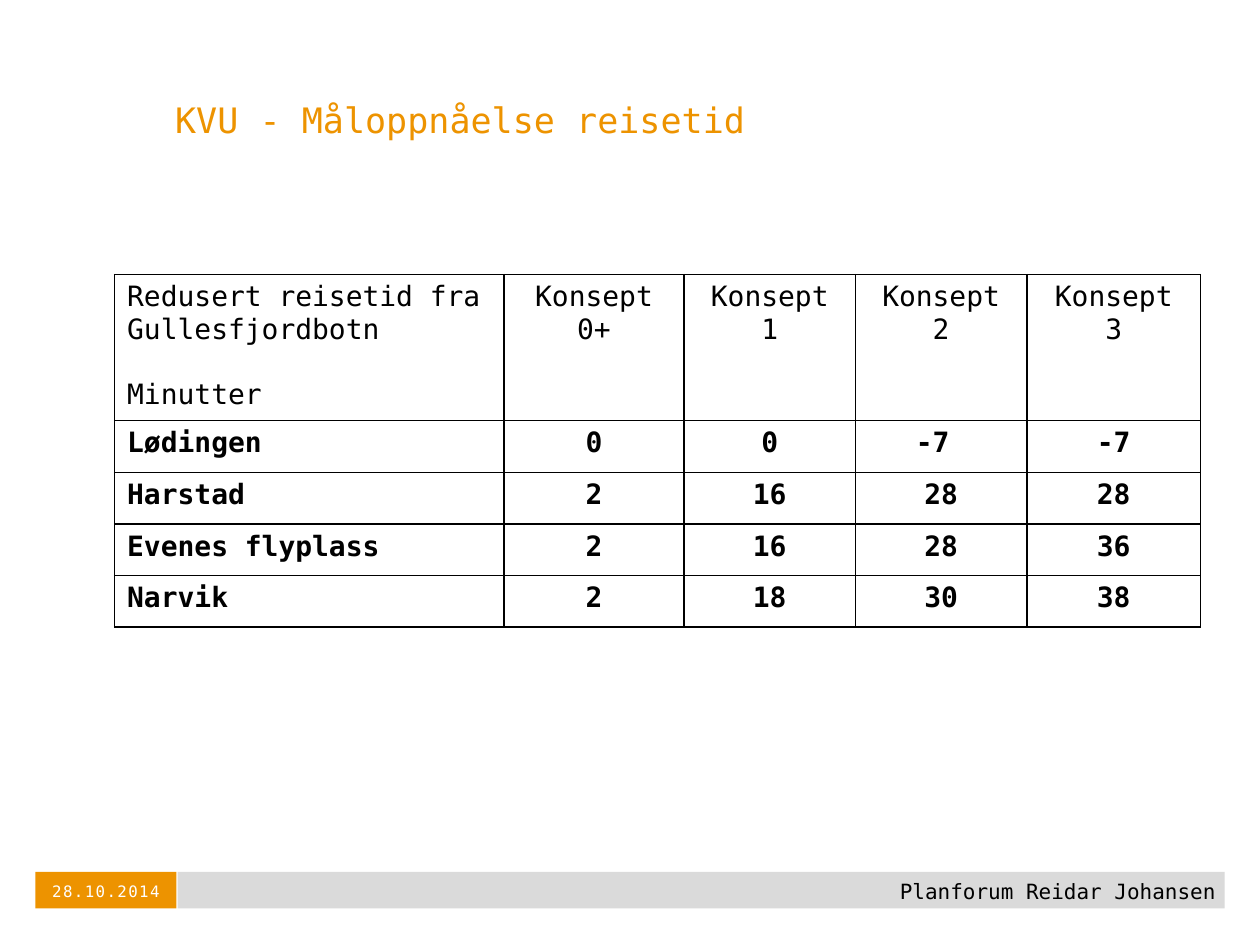
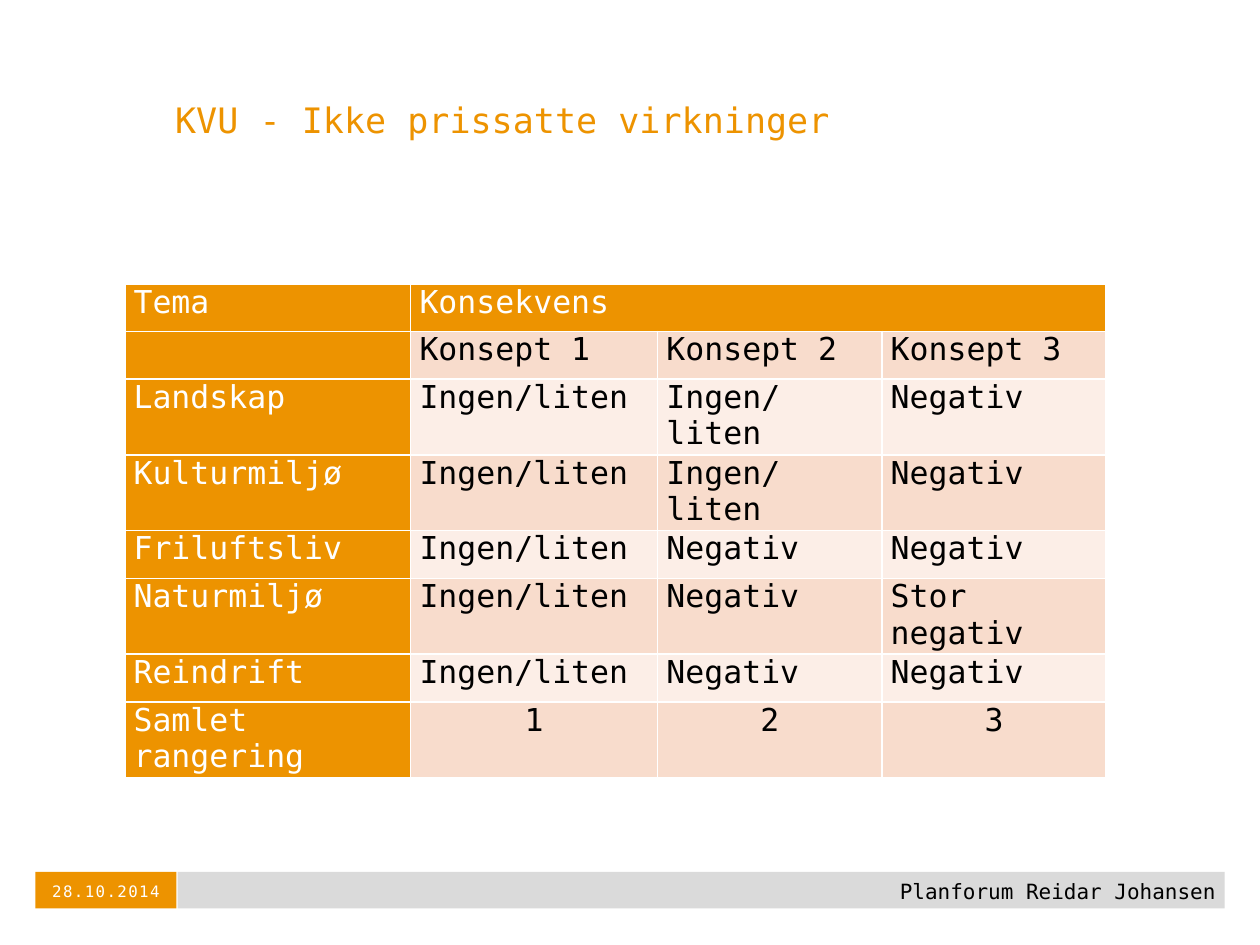
"""Build two slides with concept comparison tables for a road study."""
from lxml import etree
from pptx import Presentation
from pptx import util as u
from pptx.dml.color import RGBColor
from pptx.enum import shapes, text
from pptx.oxml.ns import qn

THEME = dict(
    font="DejaVu Sans Mono", orange="ED9300", grey="DADADA", black="000000", white="FFFFFF",
    peach="F8DCCC", pale="FCEEE7", title=20, goals=16, effects=18, footer=12, date=9)
LEFT, CENTER, RIGHT = text.PP_ALIGN.LEFT, text.PP_ALIGN.CENTER, text.PP_ALIGN.RIGHT
TOP, MIDDLE = text.MSO_ANCHOR.TOP, text.MSO_ANCHOR.MIDDLE


def write(tf, content, size, color="black", align=LEFT, bold=False, gap=0, spacing=0,
          inset=(0, 0), anchor=TOP):
    """Fill a text frame, one paragraph per line, with gap points between them."""
    tf.word_wrap = True
    tf.vertical_anchor = anchor
    tf.margin_left = tf.margin_right = u.Inches(inset[0])
    tf.margin_top = tf.margin_bottom = u.Inches(inset[1])
    for i, line in enumerate(content.split("\n")):
        p = tf.add_paragraph() if i else tf.paragraphs[0]
        p.alignment = align
        p.space_before = u.Pt(gap if i else 0)
        p.font.size = u.Pt(THEME[size])
        if not line:
            continue
        r = p.add_run()
        r.text = line
        r.font.name = THEME["font"]
        r.font.size = u.Pt(THEME[size])
        r.font.bold = bold
        r.font.color.rgb = RGBColor.from_string(THEME[color])
        if spacing:
            r._r.get_or_add_rPr().set("spc", str(spacing))


def add_grid(s, left, top, widths, heights, border):
    """Add a plain table with one border colour and return it."""
    frame = s.shapes.add_table(len(heights), len(widths), u.Inches(left), u.Inches(top),
                               u.Inches(sum(widths)), u.Inches(sum(heights)))
    table = frame.table
    table.first_row = table.horz_banding = False
    for col, width in zip(table.columns, widths):
        col.width = u.Inches(width)
    for row, height in zip(table.rows, heights):
        row.height = u.Inches(height)
    for cell in table.iter_cells():
        tcPr = cell._tc.get_or_add_tcPr()
        for side in ("a:lnL", "a:lnR", "a:lnT", "a:lnB"):
            ln = etree.SubElement(tcPr, qn(side), w=str(u.Pt(1)))
            fill = etree.SubElement(ln, qn("a:solidFill"))
            etree.SubElement(fill, qn("a:srgbClr"), val=THEME[border])
    return table


prs = Presentation()
prs.slide_width, prs.slide_height = u.Inches(10), u.Inches(7.5)

slides = []
for title in ("KVU - Måloppnåelse reisetid", "KVU - Ikke prissatte virkninger"):
    s = prs.slides.add_slide(prs.slide_layouts[5])
    slides.append(s)
    for left, width, color in ((1.41, 8.31, "grey"), (0.28, 1.12, "orange")):
        sp = s.shapes.add_shape(shapes.MSO_SHAPE.RECTANGLE, u.Inches(left), u.Inches(6.92),
                                u.Inches(width), u.Inches(0.29))
        sp.shadow.inherit = False
        sp.fill.solid()
        sp.fill.fore_color.rgb = RGBColor.from_string(THEME[color])
        sp.line.fill.background()
    sp = s.shapes.title
    sp.left, sp.top, sp.width, sp.height = (u.Inches(v) for v in (1.39, 0.78, 6.23, 0.39))
    sp.text_frame.auto_size = text.MSO_AUTO_SIZE.NONE
    write(sp.text_frame, title, "title", "orange")
    footer = s.shapes.add_textbox(u.Inches(1.72), u.Inches(6.97), u.Inches(7.93), u.Inches(0.19))
    write(footer.text_frame, "Planforum Reidar Johansen", "footer", align=RIGHT)
    date = s.shapes.add_textbox(u.Inches(0.28), u.Inches(6.98), u.Inches(1.12), u.Inches(0.19))
    write(date.text_frame, "28.10.2014", "date", "white", CENTER, spacing=80, anchor=MIDDLE)

goals = [
    ("Redusert reisetid fra Gullesfjordbotn\nMinutter",
     "Konsept 0+", "Konsept 1", "Konsept 2", "Konsept 3"),
    ("Lødingen", "0", "0", "-7 ", "-7"),
    ("Harstad", "2", "16", "28", "28"),
    ("Evenes flyplass", "2", "16", "28", "36"),
    ("Narvik", "2", "18", "30", "38"),
]
table = add_grid(slides[0], 0.91, 2.18, (3.09, 1.43, 1.36, 1.36, 1.38),
                 [1.13] + [0.41] * 4, "black")
for i, row in enumerate(goals):
    for j, value in enumerate(row):
        cell = table.cell(i, j)
        cell.fill.background()
        write(cell.text_frame, value, "goals", align=CENTER if j else LEFT, bold=i > 0,
              gap=18.6, inset=(0.1, 0.05))
        cell.margin_left = cell.margin_right = u.Inches(0.1)
        cell.margin_top = cell.margin_bottom = u.Inches(0.05)

effects = [
    ("Tema", "Konsekvens", "", ""),
    ("", "Konsept 1", "Konsept 2", "Konsept 3"),
    ("Landskap", "Ingen/liten", "Ingen/liten", "Negativ"),
    ("Kulturmiljø", "Ingen/liten", "Ingen/liten", "Negativ"),
    ("Friluftsliv", "Ingen/liten", "Negativ", "Negativ"),
    ("Naturmiljø", "Ingen/liten", "Negativ", "Stor negativ"),
    ("Reindrift", "Ingen/liten", "Negativ", "Negativ"),
    ("Samlet rangering", "1", "2", "3"),
]
table = add_grid(slides[1], 0.99, 2.26, (2.27, 1.96, 1.78, 1.78),
                 (0.37, 0.38, 0.58, 0.58, 0.38, 0.58, 0.38, 0.58), "white")
table.cell(0, 1).merge(table.cell(0, 3))
for i, row in enumerate(effects):
    for j, value in enumerate(row):
        cell = table.cell(i, j)
        heading = i == 0 or j == 0
        band = "orange" if heading else "peach" if i % 2 else "pale"
        cell.fill.solid()
        cell.fill.fore_color.rgb = RGBColor.from_string(THEME[band])
        write(cell.text_frame, value, "effects", "white" if heading else "black",
              CENTER if value.isdigit() else LEFT)
        cell.margin_left = cell.margin_right = u.Inches(0.07)
        cell.margin_top = cell.margin_bottom = 0

prs.save("out.pptx")
